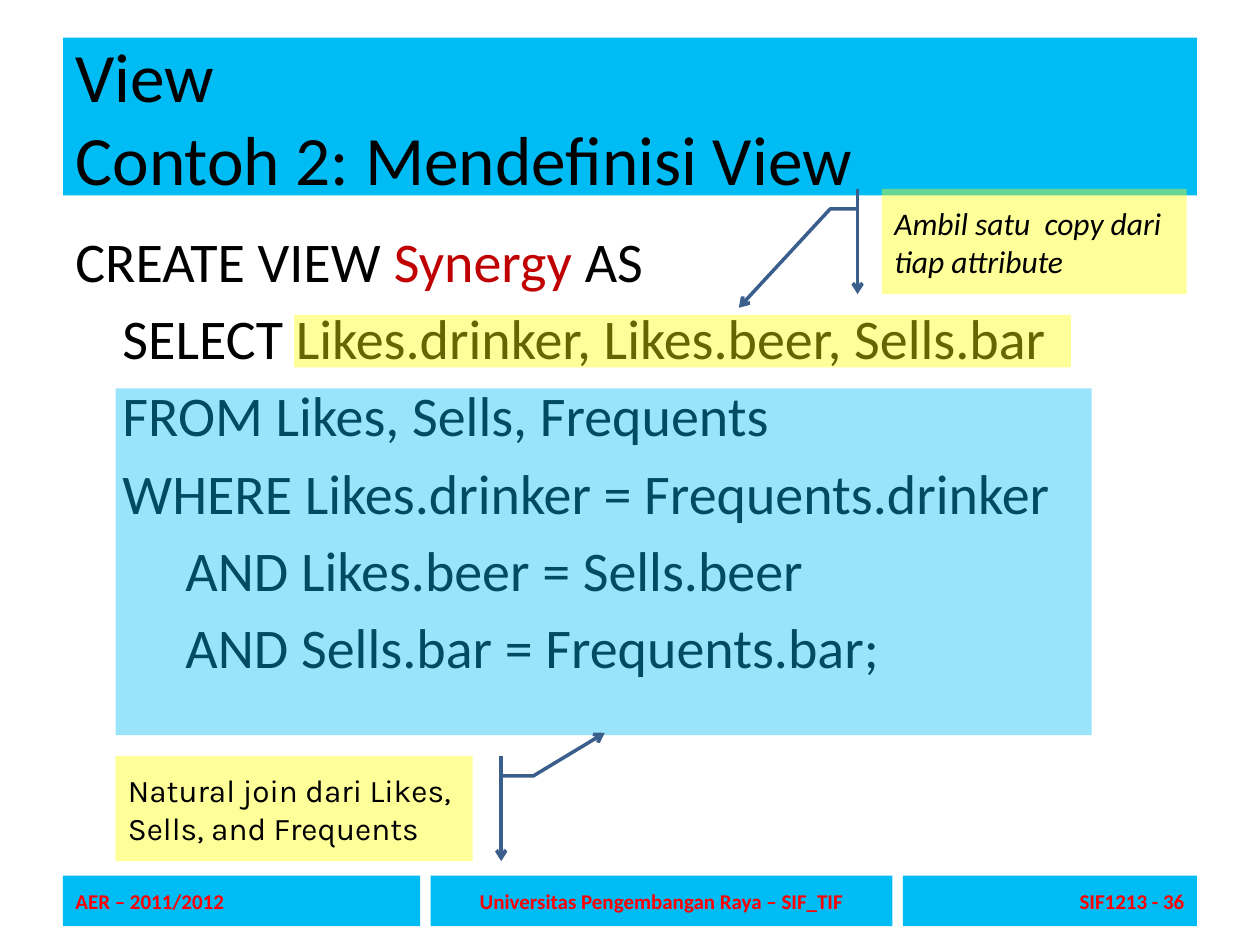
"""Build a slide that explains a SQL view definition with two callouts."""
from lxml import etree
from pptx import Presentation
from pptx import util as u
from pptx.dml.color import RGBColor
from pptx.enum import shapes, text
from pptx.oxml.ns import qn

CYAN, YELLOW, BLACK, RED = "00BCF4", "FFFF00", "000000", "FF0000"
LEFT, WIDTH = 1.27, 22.86
TITLE = "View\vContoh 2: Mendefinisi View"
QUERY = [
    [("CREATE VIEW ", BLACK), ("Synergy", "C00000"), (" AS", BLACK)],
    [("\tSELECT Likes.drinker, Likes.beer, Sells.bar", BLACK)],
    [("\tFROM Likes, Sells, Frequents", BLACK)],
    [("\tWHERE Likes.drinker = Frequents.drinker", BLACK)],
    [("\t\tAND Likes.beer = Sells.beer", BLACK)],
    [("\t\tAND Sells.bar = Frequents.bar;", BLACK)],
]
FOOTER_TOP, FOOTER_HEIGHT, FOOTER_GAP = 17.65, 1.02, 0.21
FOOTERS = [
    ("AER – 2011/2012", 7.2, text.PP_ALIGN.LEFT),
    ("Universitas Pengembangan Raya – SIF_TIF", 9.31, text.PP_ALIGN.CENTER),
    ("SIF1213 - 36", 5.93, text.PP_ALIGN.RIGHT),
]
HIGHLIGHTS = [
    ((5.93, 6.35, 15.66, 1.06), YELLOW),
    ((2.33, 7.83, 19.68, 6.99), CYAN),
]
CALLOUTS = [
    {"text": "Ambil satu  copy dari tiap attribute", "box": (17.78, 3.81, 6.14, 2.12),
     "font": "Calibri", "italic": True, "flip": False,
     "adj": (0.19, -0.08, 0.19, -0.17, 1.13, -0.47)},
    {"text": "Natural join dari Likes, Sells, and Frequents", "box": (2.33, 15.24, 7.2, 2.12),
     "font": "Karla", "italic": False, "flip": True,
     "adj": (0.19, -0.08, 0.19, -0.17, -0.22, -0.37)},
]


def paint(fmt, color, alpha=None):
    """Give a fill a solid colour, with an optional opacity in percent."""
    fmt.solid()
    fmt.fore_color.rgb = RGBColor.from_string(color)
    if alpha:
        clr = fmt._xPr.find(qn("a:solidFill"))[0]
        etree.SubElement(clr, qn("a:alpha"), val=str(alpha * 1000))


def style(r, size, color=BLACK, font="Calibri", bold=False, italic=False):
    """Format one run."""
    r.font.size, r.font.name = u.Pt(size), font
    r.font.bold, r.font.italic = bold, italic
    paint(r.font.fill, color)


def add_box(slide, box, color, alpha=None, kind=shapes.MSO_SHAPE.RECTANGLE):
    """Add a filled shape without outline or shadow."""
    sp = slide.shapes.add_shape(kind, *map(u.Cm, box))
    sp.shadow.inherit = False
    paint(sp.fill, color, alpha)
    sp.line.fill.background()
    return sp


def write(sp, words, align=text.PP_ALIGN.LEFT, **font):
    """Set a single vertically centred paragraph."""
    tf = sp.text_frame
    tf.word_wrap = True
    tf.auto_size = text.MSO_AUTO_SIZE.NONE
    tf.vertical_anchor = text.MSO_ANCHOR.MIDDLE
    tf.text = words
    p = tf.paragraphs[0]
    p.alignment = align
    for r in p.runs:
        style(r, **font)


def add_title(slide):
    """Place and format the title placeholder."""
    sp = slide.shapes.title
    sp.left, sp.top, sp.width, sp.height = map(u.Cm, (LEFT, 0.76, WIDTH, 3.18))
    paint(sp.fill, CYAN)
    write(sp, TITLE, size=39.6)


def add_query(slide):
    """Add the SQL statement, one paragraph per line."""
    tf = slide.shapes.add_textbox(*map(u.Cm, (LEFT, 4.45, WIDTH, 12.57))).text_frame
    tf.word_wrap = True
    for i, line in enumerate(QUERY):
        p = tf.paragraphs[0] if i == 0 else tf.add_paragraph()
        p.space_before = u.Pt(5.6)
        pPr = p._p.get_or_add_pPr()
        pPr.set("marL", str(u.Cm(0.95)))
        pPr.set("indent", str(u.Cm(-0.95)))
        for words, color in line:
            r = p.add_run()
            r.text = words
            style(r, 32, color)


def add_footer(slide):
    """Lay the footer boxes side by side with equal gaps."""
    left = LEFT
    for words, width, align in FOOTERS:
        sp = add_box(slide, (left, FOOTER_TOP, width, FOOTER_HEIGHT), CYAN)
        write(sp, words, align, size=12, color=RED, bold=True)
        left += width + FOOTER_GAP


def add_callout(slide, note):
    """Add an accent-bar callout whose leader ends in an arrow."""
    sp = add_box(slide, note["box"], YELLOW, 40, shapes.MSO_SHAPE.LINE_CALLOUT_2_ACCENT_BAR)
    for i, value in enumerate(note["adj"]):
        sp.adjustments[i] = value
    if note["flip"]:
        sp._element.spPr.find(qn("a:xfrm")).set("flipH", "1")
    paint(sp.line.fill, "3A5F8C")
    sp.line.width = u.Pt(2)
    etree.SubElement(sp.line._get_or_add_ln(), qn("a:tailEnd"), type="arrow")
    write(sp, note["text"], size=18, font=note["font"], italic=note["italic"])


def main():
    """Assemble and save the slide."""
    prs = Presentation()
    prs.slide_width, prs.slide_height = u.Cm(25.4), u.Cm(19.05)
    slide = prs.slides.add_slide(prs.slide_layouts[5])
    add_title(slide)
    add_query(slide)
    add_footer(slide)
    for box, color in HIGHLIGHTS:
        add_box(slide, box, color, 40)
    for note in CALLOUTS:
        add_callout(slide, note)
    prs.save("out.pptx")


if __name__ == "__main__":
    main()
